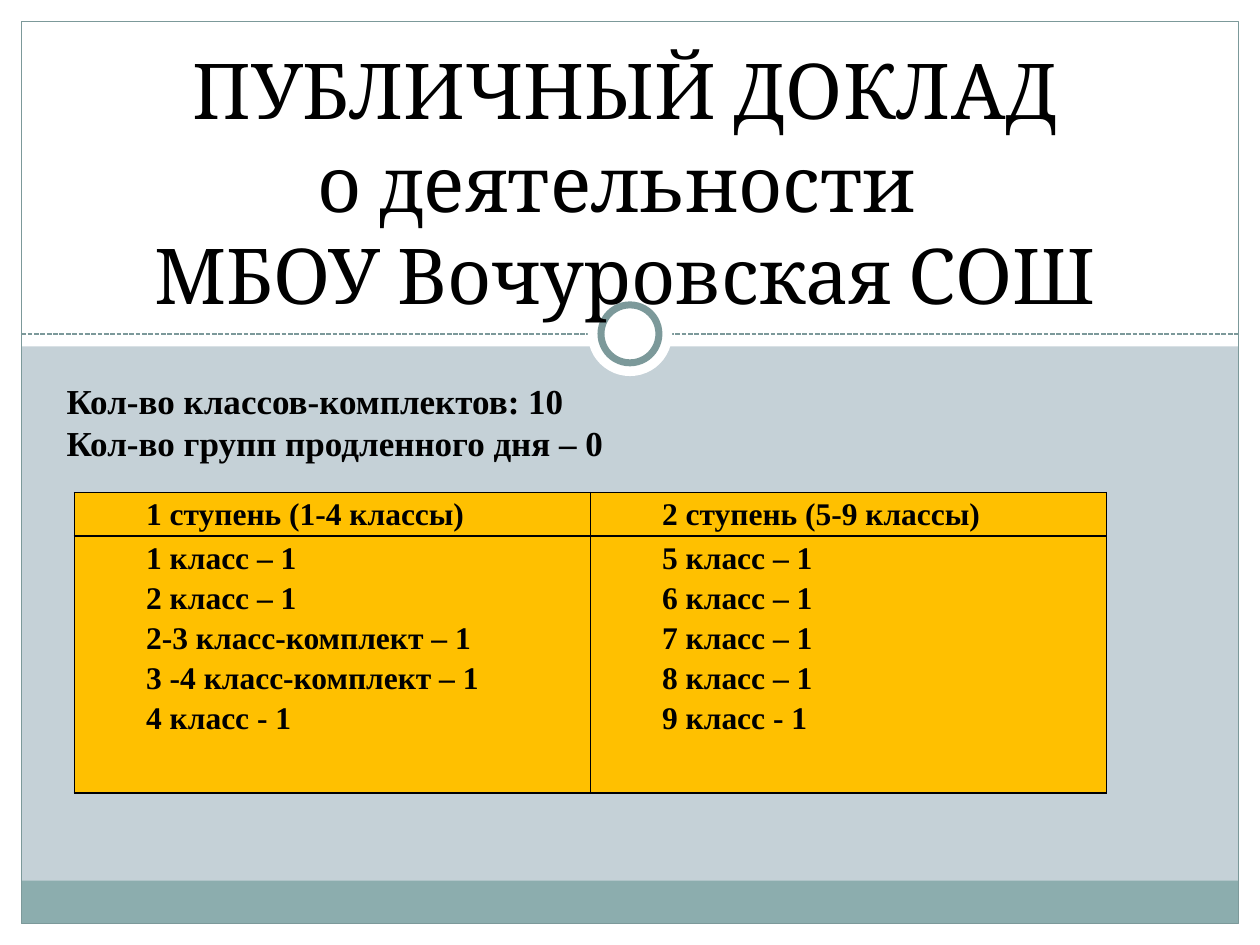
from lxml.etree import SubElement
from pptx import Presentation
from pptx.dml.color import RGBColor
from pptx.enum.dml import MSO_LINE
from pptx.enum.shapes import MSO_CONNECTOR, MSO_SHAPE as Shape
from pptx.enum.text import MSO_ANCHOR as Anchor, MSO_AUTO_SIZE as AutoSize, PP_ALIGN as Align
from pptx.oxml.ns import qn
from pptx.util import Inches, Pt

COLUMNS, ROWS = 100, 75
CELL = Inches(0.1)
EDGE = 1.7
RULE = 26.5
COLORS = {
    "page": "C5D1D7",
    "white": "FFFFFF",
    "band": "8CADAE",
    "line": "7C999A",
    "cell": "FFC000",
    "ink": "000000",
}
SERIF = "Times New Roman"
TITLE = ["ПУБЛИЧНЫЙ ДОКЛАД", "о деятельности ", "МБОУ Вочуровская СОШ"]
SUMMARY = ["Кол-во классов-комплектов: 10", "Кол-во групп продленного дня – 0"]
STAGES = {
    "1 ступень (1-4 классы)": [
        "1 класс – 1",
        "2 класс – 1",
        "2-3 класс-комплект – 1",
        "3 -4 класс-комплект – 1",
        "4 класс - 1",
    ],
    "2 ступень (5-9 классы)": [
        "5 класс – 1",
        "6 класс – 1",
        "7 класс – 1",
        "8 класс – 1",
        "9 класс - 1",
    ],
}


def grid(*steps):
    return [int(step * CELL) for step in steps]


def color(name):
    return RGBColor.from_string(COLORS[name])


def write(frame, lines, size, font=SERIF, bold=False, align=Align.LEFT, indent=0, spacing=None):
    for index, line in enumerate(lines):
        para = frame.add_paragraph() if index else frame.paragraphs[0]
        para.alignment = align
        if indent:
            properties = para._p.get_or_add_pPr()
            properties.set("marL", str(Inches(indent)))
            properties.set("indent", "0")
        if spacing:
            para.line_spacing = spacing
        span = para.add_run()
        span.text = line
        span.font.name = font
        span.font.size = Pt(size)
        span.font.bold = bold
        span.font.color.rgb = color("ink")


def add_figure(page, kind, place, fill=None, line_width=0):
    figure = page.shapes.add_shape(kind, *grid(*place))
    figure.shadow.inherit = False
    if fill:
        figure.fill.solid()
        figure.fill.fore_color.rgb = color(fill)
    else:
        figure.fill.background()
    if line_width:
        figure.line.color.rgb = color("line")
        figure.line.width = Pt(line_width)
    else:
        figure.line.fill.background()


def add_circle(page, middle, diameter, line_width=0):
    corner = (COLUMNS / 2 - diameter / 2, middle - diameter / 2)
    add_figure(page, Shape.OVAL, (*corner, diameter, diameter), "white", line_width)


def add_rule(page, row):
    rule = page.shapes.add_connector(
        MSO_CONNECTOR.STRAIGHT, *grid(EDGE, row, COLUMNS - EDGE, row)
    )
    rule.line.color.rgb = color("line")
    rule.line.width = Pt(0.9)
    rule.line.dash_style = MSO_LINE.SQUARE_DOT
    SubElement(rule._element.spPr, qn("a:effectLst"))


def add_backdrop(page):
    page.background.fill.solid()
    page.background.fill.fore_color.rgb = color("page")
    inner_width, inner_height = COLUMNS - 2 * EDGE, ROWS - 2 * EDGE
    margins = [
        (0, ROWS - EDGE, COLUMNS, EDGE),
        (COLUMNS - EDGE, 0, EDGE, ROWS),
        (0, 0, EDGE, ROWS),
        (0, 0, COLUMNS, 27.5),
    ]
    for margin in margins:
        add_figure(page, Shape.RECTANGLE, margin, "white")
    add_figure(page, Shape.RECTANGLE, (EDGE, 69.9, inner_width, 3.4), "band")
    add_rule(page, RULE)
    add_figure(page, Shape.RECTANGLE, (EDGE, EDGE, inner_width, inner_height), line_width=0.75)
    add_circle(page, RULE, 6.7)
    add_circle(page, RULE, 4.6, line_width=4)


def add_title(page):
    title = page.shapes.title
    page.shapes._spTree.append(title._element)
    title.left, title.top, title.width, title.height = grid(7.5, 2.9, 84.3, 23.2)
    frame = title.text_frame
    frame.word_wrap = True
    frame.auto_size = AutoSize.SHAPE_TO_FIT_TEXT
    frame.vertical_anchor = Anchor.TOP
    write(frame, TITLE, 44, font="Cambria", align=Align.CENTER)


def add_borders(cell):
    properties = cell._tc.get_or_add_tcPr()
    for side in ("lnL", "lnR", "lnT", "lnB"):
        border = SubElement(properties, qn(f"a:{side}"), w=str(Pt(1)))
        fill = SubElement(border, qn("a:solidFill"))
        SubElement(fill, qn("a:srgbClr"), val=COLORS["ink"])


def fill_cell(cell, lines):
    add_borders(cell)
    cell.fill.solid()
    cell.fill.fore_color.rgb = color("cell")
    cell.margin_left = cell.margin_right = Inches(0.07)
    cell.margin_top = cell.margin_bottom = 0
    write(cell.text_frame, lines, 18, bold=True, align=Align.JUSTIFY, indent=0.5, spacing=1.15)


def add_stages(page):
    table = page.shapes.add_table(2, len(STAGES), *grid(5.9, 39.1, 81.9, 23.6)).table
    table.first_row = table.horz_banding = False
    table.rows[0].height, table.rows[1].height = grid(3.2, 20.4)
    for column, (heading, classes) in enumerate(STAGES.items()):
        fill_cell(table.cell(0, column), [heading])
        fill_cell(table.cell(1, column), classes)


def add_summary(page):
    box = page.shapes.add_textbox(*grid(4.3, 29.6, 45, 7.7))
    frame = box.text_frame
    frame.word_wrap = False
    frame.auto_size = AutoSize.SHAPE_TO_FIT_TEXT
    frame.vertical_anchor = Anchor.MIDDLE
    write(frame, SUMMARY, 20, bold=True)


def main():
    deck = Presentation()
    deck.slide_width, deck.slide_height = grid(COLUMNS, ROWS)
    page = deck.slides.add_slide(deck.slide_layouts[5])
    add_backdrop(page)
    add_title(page)
    add_stages(page)
    add_summary(page)
    deck.save("out.pptx")


if __name__ == "__main__":
    main()
